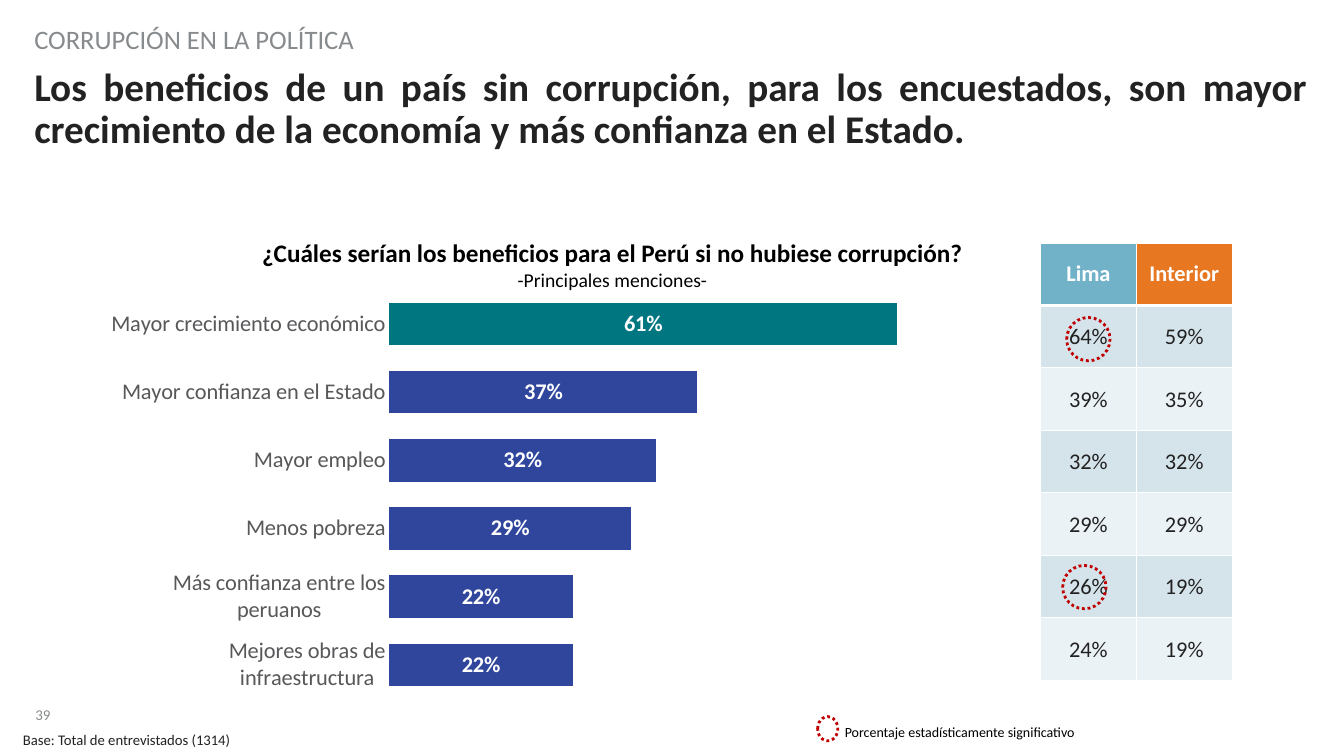
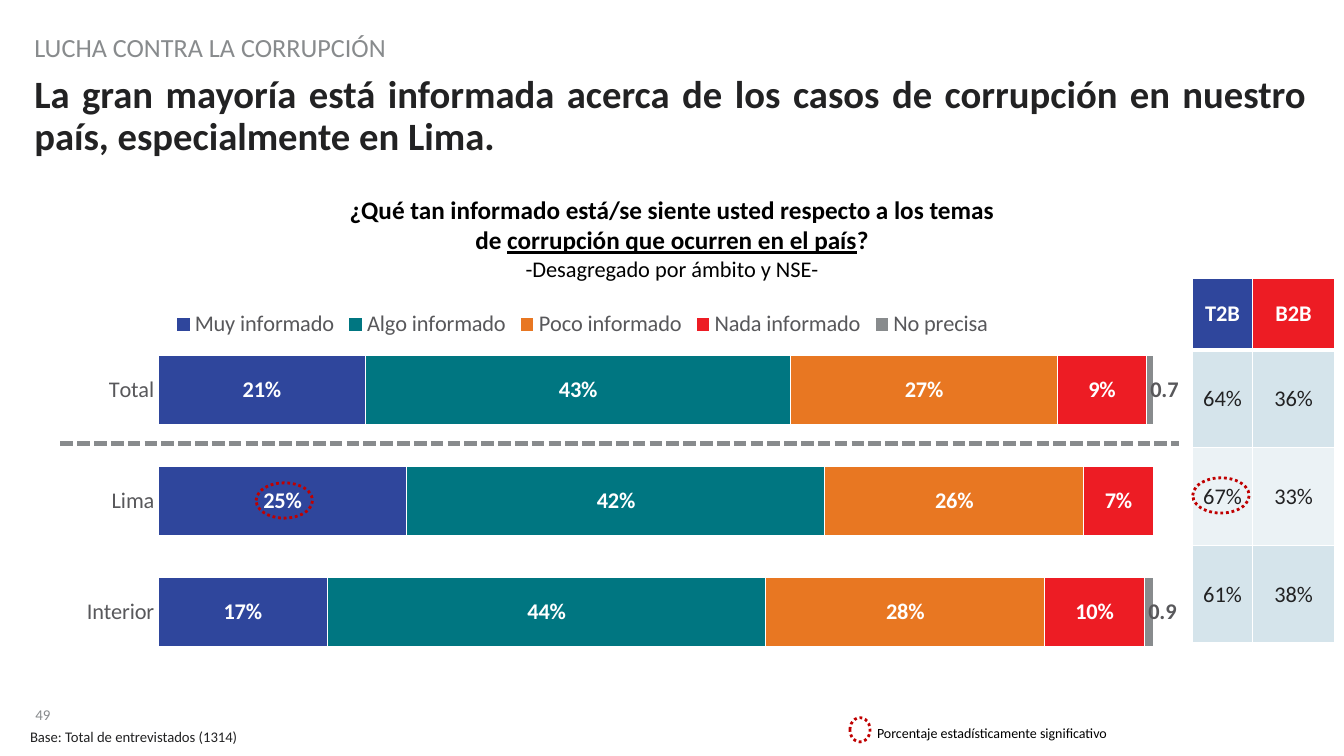
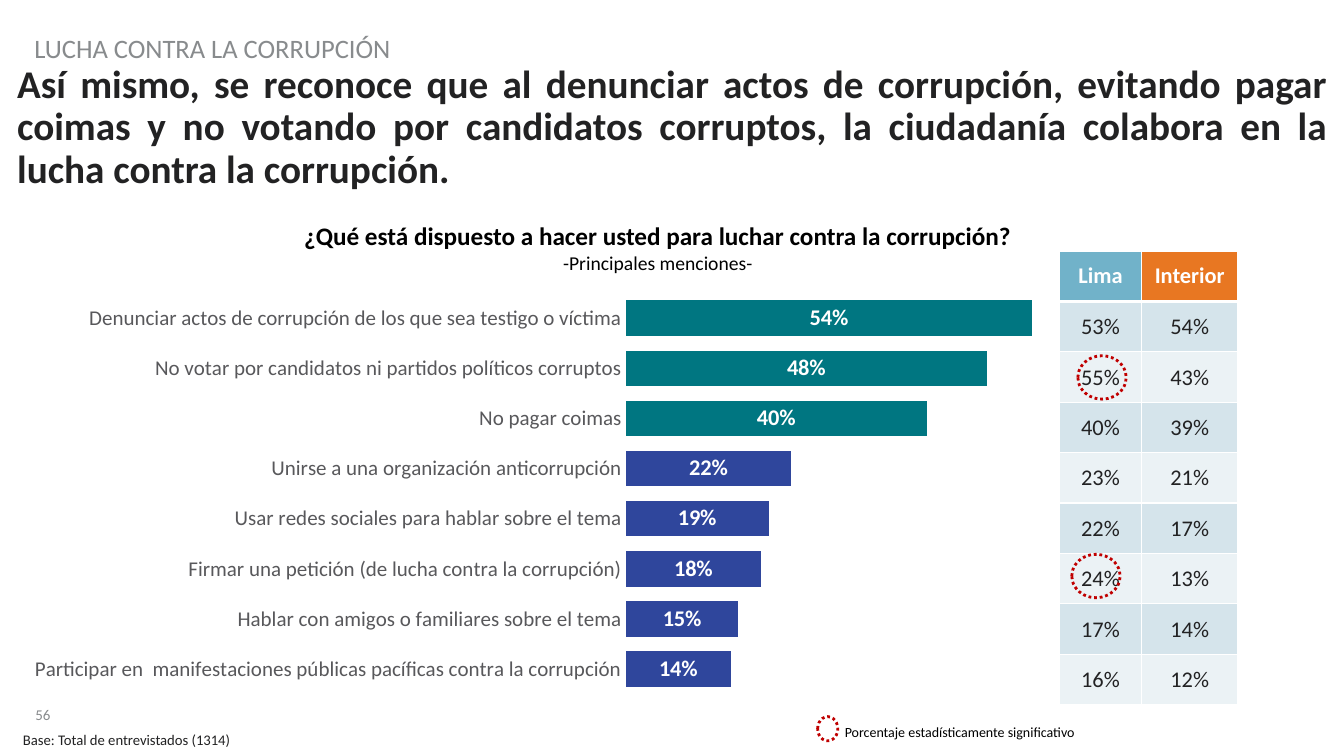
from pptx import Presentation
from pptx.chart.data import CategoryChartData
from pptx.dml.color import RGBColor
from pptx.enum.chart import XL_CHART_TYPE as CT, XL_LABEL_POSITION as LP
from pptx.enum.chart import XL_LEGEND_POSITION as LEG, XL_TICK_MARK as TICK
from pptx.enum.dml import MSO_LINE
from pptx.enum.shapes import MSO_CONNECTOR, MSO_SHAPE
from pptx.enum.text import MSO_ANCHOR as ANCHOR, PP_ALIGN as AL
from pptx.oxml import parse_xml
from pptx.oxml.ns import nsdecls
from pptx.util import Inches, Pt

HEX = {
    "blue": "2F469C", "teal": "007681", "orange": "E87722", "red": "ED1C24",
    "sky": "71B2C9", "grey": "888B8D", "label": "58585B", "ink": "222223",
    "black": "000000", "white": "FFFFFF", "band": "D5E4EB", "pale": "EBF2F5",
    "mark": "C00000",
}
C = {name: RGBColor.from_string(value) for name, value in HEX.items()}
FONT = "Calibri"
PERCENT = r"0\%"

SLIDES = [
    {
        "number": "39",
        "kicker": ("CORRUPCIÓN EN LA POLÍTICA", 0.1, 0.44, 19),
        "title": ("Los beneficios de un país sin corrupción, para los encuestados, son mayor "
                  "crecimiento de la economía y más confianza en el Estado.",
                  (0.34, 0.67, 12.62, 0.85), 28),
        "question": ([("¿Cuáles serían los beneficios para el Perú si no hubiese corrupción?", False)],
                     "-Principales menciones-", 14, (2.33, 2.31, 7.49, 0.64)),
        "chart": {
            "type": CT.BAR_CLUSTERED, "at": (0.93, 2.79, 8.89, 4.23),
            "plot": (0.33, 0.02, 0.65, 0.96), "gap": 60, "size": 16, "max": 70, "teal": 1,
            "cats": ["Mayor crecimiento económico", "Mayor confianza en el Estado",
                     "Mayor empleo", "Menos pobreza", "Más confianza entre los peruanos",
                     "Mejores obras de infraestructura"],
            "series": [("Series 1", [61, 37, 32, 29, 22, 22], "blue")],
        },
        "table": {
            "at": (10.32, 2.41), "cols": (0.95, 0.95), "rows": (0.62, 0.62),
            "head": [("Lima", "sky"), ("Interior", "orange")],
            "body": [(64, 59), (39, 35), (32, 32), (29, 29), (26, 19), (24, 19)],
        },
        "base": (0.13, 7.2), "key": (8.28, 7.13),
        "marks": [(10.58, 3.15, 0.43, 0.43), (10.54, 5.61, 0.43, 0.43)],
    },
    {
        "number": "49",
        "kicker": ("LUCHA CONTRA LA CORRUPCIÓN", 0.21, 0.41, 18.7),
        "title": ("La gran mayoría está informada acerca de los casos de corrupción en nuestro "
                  "país, especialmente en Lima.", (0.34, 0.75, 12.62, 0.84), 27.6),
        "question": ([("¿Qué tan informado está/se siente usted respecto a los temas de ", False),
                      ("corrupción que ocurren en el país", True), ("?", False)],
                     "-Desagregado por ámbito y NSE-", 16, (3.33, 1.88, 6.67, 0.98)),
        "chart": {
            "type": CT.BAR_STACKED_100, "at": (0.57, 2.76, 11.12, 3.98),
            "plot": (0.09, 0.14, 0.89, 0.83), "gap": 60, "size": 16, "max": None, "teal": 0,
            "cats": ["Total", "Lima", "Interior"],
            "series": [("Muy informado", [21, 25, 17], "blue"),
                       ("Algo informado", [43, 42, 44], "teal"),
                       ("Poco informado", [27, 26, 28], "orange"),
                       ("Nada informado", [9, 7, 10], "red"),
                       ("No precisa", [0.7, None, 0.9], "grey")],
        },
        "divider": (0.6, 4.4, 11.69, 4.4),
        "table": {
            "at": (11.83, 2.76), "cols": (0.59, 0.82), "rows": (0.71, 0.97),
            "head": [("T2B", "blue"), ("B2B", "red")],
            "body": [(64, 36), (67, 33), (61, 38)],
        },
        "base": (0.2, 7.17), "key": (8.6, 7.14),
        "marks": [(2.54, 4.79, 0.56, 0.35), (11.83, 4.74, 0.56, 0.35)],
    },
    {
        "number": "56",
        "kicker": ("LUCHA CONTRA LA CORRUPCIÓN", 0.22, 0.41, 19),
        "title": ("Así mismo, se reconoce que al denunciar actos de corrupción, evitando pagar "
                  "coimas y no votando por candidatos corruptos, la ciudadanía colabora en la "
                  "lucha contra la corrupción.", (0.17, 0.64, 12.99, 1.27), 28),
        "question": ([("¿Qué está dispuesto a hacer usted para luchar contra la corrupción?", False)],
                     "-Principales menciones-", 14, (2.74, 2.14, 7.57, 0.64)),
        "chart": {
            "type": CT.BAR_CLUSTERED, "at": (-1.36, 2.77, 12.28, 4.26),
            "plot": (0.616, 0.033, 0.365, 0.933), "gap": 40, "size": 15, "max": 60, "teal": 3,
            "cats": ["Denunciar actos de corrupción de los que sea testigo o víctima",
                     "No votar por candidatos ni partidos políticos corruptos",
                     "No pagar coimas", "Unirse a una organización anticorrupción",
                     "Usar redes sociales para hablar sobre el tema",
                     "Firmar una petición (de lucha contra la corrupción)",
                     "Hablar con amigos o familiares sobre el tema",
                     "Participar en  manifestaciones públicas pacíficas contra la corrupción"],
            "series": [("Series 1", [54, 48, 40, 22, 19, 18, 15, 14], "blue")],
        },
        "table": {
            "at": (10.51, 2.49), "cols": (0.81, 0.96), "rows": (0.5, 0.5),
            "head": [("Lima", "sky"), ("Interior", "orange")],
            "body": [(53, 54), (55, 43), (40, 39), (23, 21), (22, 17), (24, 13), (17, 14), (16, 12)],
        },
        "base": (0.13, 7.2), "key": (8.28, 7.13),
        "marks": [(10.69, 3.53, 0.48, 0.43), (10.63, 5.5, 0.48, 0.43)],
    },
]


def add_text(s, at, lines, inset=True, anchor=ANCHOR.TOP, align=AL.LEFT, spacing=None):
    tf = s.shapes.add_textbox(*map(Inches, at)).text_frame
    tf.word_wrap = True
    tf.vertical_anchor = anchor
    if not inset:
        tf.margin_left = tf.margin_top = tf.margin_right = tf.margin_bottom = 0
    for i, (runs, size, color, bold) in enumerate(lines):
        p = tf.add_paragraph() if i else tf.paragraphs[0]
        p.alignment = align
        p.line_spacing = spacing
        for text, underline in runs:
            r = p.add_run()
            r.text = text
            r.font.name, r.font.size, r.font.bold = FONT, Pt(size), bold
            r.font.color.rgb = C[color]
            r.font.underline = underline


def set_layout(parent, index, values, inner):
    for old in parent.xpath("./c:layout"):
        parent.remove(old)
    target = '<c:layoutTarget val="inner"/>' if inner else ""
    modes = '<c:xMode val="edge"/><c:yMode val="edge"/>'
    sides = "".join(f'<c:{n} val="{v}"/>' for n, v in zip("xywh", values))
    parent.insert(index, parse_xml(
        f'<c:layout {nsdecls("c")}><c:manualLayout>{target}{modes}{sides}</c:manualLayout></c:layout>'))


prs = Presentation()
prs.slide_width, prs.slide_height = Inches(13.33), Inches(7.5)

for d in SLIDES:
    s = prs.slides.add_slide(prs.slide_layouts[6])
    add_text(s, (0.35, 6.83, 0.45, 0.35), [([(d["number"], False)], 10.7, "grey", False)],
             False, ANCHOR.BOTTOM, spacing=0.85)
    title, at, size = d["title"]
    add_text(s, at, [([(title, False)], size, "ink", True)], False, align=AL.JUSTIFY, spacing=0.9)
    kicker, top, height, size = d["kicker"]
    add_text(s, (0.34, top, 9.81, height), [([(kicker, False)], size, "grey", False)],
             False, ANCHOR.BOTTOM)

    spec_chart = d["chart"]
    data = CategoryChartData()
    data.categories = spec_chart["cats"]
    for name, values, color in spec_chart["series"]:
        data.add_series(name, values)
    chart = s.shapes.add_chart(spec_chart["type"], *map(Inches, spec_chart["at"]), data).chart
    chart.has_title = False
    chart.font.name, chart.font.size = FONT, Pt(16)
    chart.font.color.rgb = C["label"]
    stacked = len(spec_chart["series"]) > 1
    chart.has_legend = stacked
    if stacked:
        chart.legend.position = LEG.TOP
        chart.legend.include_in_layout = False
        chart.legend.font.name, chart.legend.font.size = FONT, Pt(16)
        chart.legend.font.color.rgb = C["label"]
        set_layout(chart.legend._element, 1, (0.1, 0.07), False)
    cat, val = chart.category_axis, chart.value_axis
    cat.reverse_order = True
    cat.major_tick_mark = cat.minor_tick_mark = TICK.NONE
    cat.format.line.fill.background()
    cat.tick_labels.font.name, cat.tick_labels.font.size = FONT, Pt(spec_chart["size"])
    cat.tick_labels.font.color.rgb = C["label"]
    val.visible = False
    val.has_major_gridlines = False
    if spec_chart["max"]:
        val.minimum_scale, val.maximum_scale = 0, spec_chart["max"]
    plot = chart.plots[0]
    plot.vary_by_categories = False
    plot.gap_width = spec_chart["gap"]
    if stacked:
        plot.overlap = 100
    for series, (name, values, color) in zip(plot.series, spec_chart["series"]):
        series.format.fill.solid()
        series.format.fill.fore_color.rgb = C[color]
        if stacked:
            series.format.line.color.rgb = C["white"]
            series.format.line.width = Pt(0.75)
        for i in range(spec_chart["teal"]):
            fill = series.points[i].format.fill
            fill.solid()
            fill.fore_color.rgb = C["teal"]
        outside = color == "grey"
        labels = series.data_labels
        labels.show_value = True
        labels.position = LP.INSIDE_BASE if outside else LP.CENTER
        labels.number_format = "General" if outside else PERCENT
        labels.number_format_is_linked = False
        labels.font.name, labels.font.size, labels.font.bold = FONT, Pt(16), True
        labels.font.color.rgb = C["label" if outside else "white"]
    set_layout(chart._chartSpace.xpath(".//c:plotArea")[0], 0, spec_chart["plot"], True)

    runs, note, size, at = d["question"]
    add_text(s, at, [(runs, 18, "black", True), ([(note, False)], size, "black", False)],
             align=AL.CENTER)

    t = d["table"]
    rows = [t["head"]] + [[(f"{v}%", "pale" if i % 2 else "band") for v in row]
                          for i, row in enumerate(t["body"])]
    head_height, row_height = t["rows"]
    table = s.shapes.add_table(len(rows), 2, *map(Inches, t["at"]), Inches(sum(t["cols"])),
                               Inches(head_height + row_height * len(t["body"]))).table
    for column, width in zip(table.columns, t["cols"]):
        column.width = Inches(width)
    for i, row in enumerate(rows):
        table.rows[i].height = Inches(row_height if i else head_height)
        for j, (text, color) in enumerate(row):
            cell = table.cell(i, j)
            cell.text = text
            cell.vertical_anchor = ANCHOR.MIDDLE
            if i:
                cell.margin_left = cell.margin_right = cell.margin_top = Inches(0.01)
                cell.margin_bottom = 0
            cell.fill.solid()
            cell.fill.fore_color.rgb = C[color]
            p = cell.text_frame.paragraphs[0]
            p.alignment = AL.CENTER
            r = p.runs[0]
            r.font.name, r.font.size, r.font.bold = FONT, Pt(16), i == 0
            r.font.color.rgb = C["ink" if i else "white"]
            widths = {"L": 1, "R": 1, "T": 3 if i == 1 else 1, "B": 1 if i else 3}
            for k, (side, width) in enumerate(widths.items()):
                cell._tc.get_or_add_tcPr().insert(k, parse_xml(
                    f'<a:ln{side} {nsdecls("a")} w="{Pt(width)}"><a:solidFill>'
                    f'<a:srgbClr val="{HEX["white"]}"/></a:solidFill></a:ln{side}>'))

    if "divider" in d:
        line = s.shapes.add_connector(MSO_CONNECTOR.STRAIGHT, *map(Inches, d["divider"]))
        line.line.color.rgb = C["grey"]
        line.line.width = Pt(3)
        line.line.dash_style = MSO_LINE.SQUARE_DOT
        line._element.spPr.append(parse_xml(f'<a:effectLst {nsdecls("a")}/>'))

    add_text(s, (*d["base"], 2.36, 0.2),
             [([("Base: Total de entrevistados (1314)", False)], 10.5, "ink", False)])
    x, y = d["key"]
    add_text(s, (x, y, 2.58, 0.27),
             [([("Porcentaje estadísticamente significativo", False)], 10, "black", False)])
    for at in [(x - 0.17, y - 0.02, 0.2, 0.24)] + d["marks"]:
        sp = s.shapes.add_shape(MSO_SHAPE.OVAL, *map(Inches, at))
        sp.shadow.inherit = False
        sp.fill.background()
        sp.line.color.rgb = C["mark"]
        sp.line.width = Pt(2)
        sp.line.dash_style = MSO_LINE.ROUND_DOT

prs.save("out.pptx")
